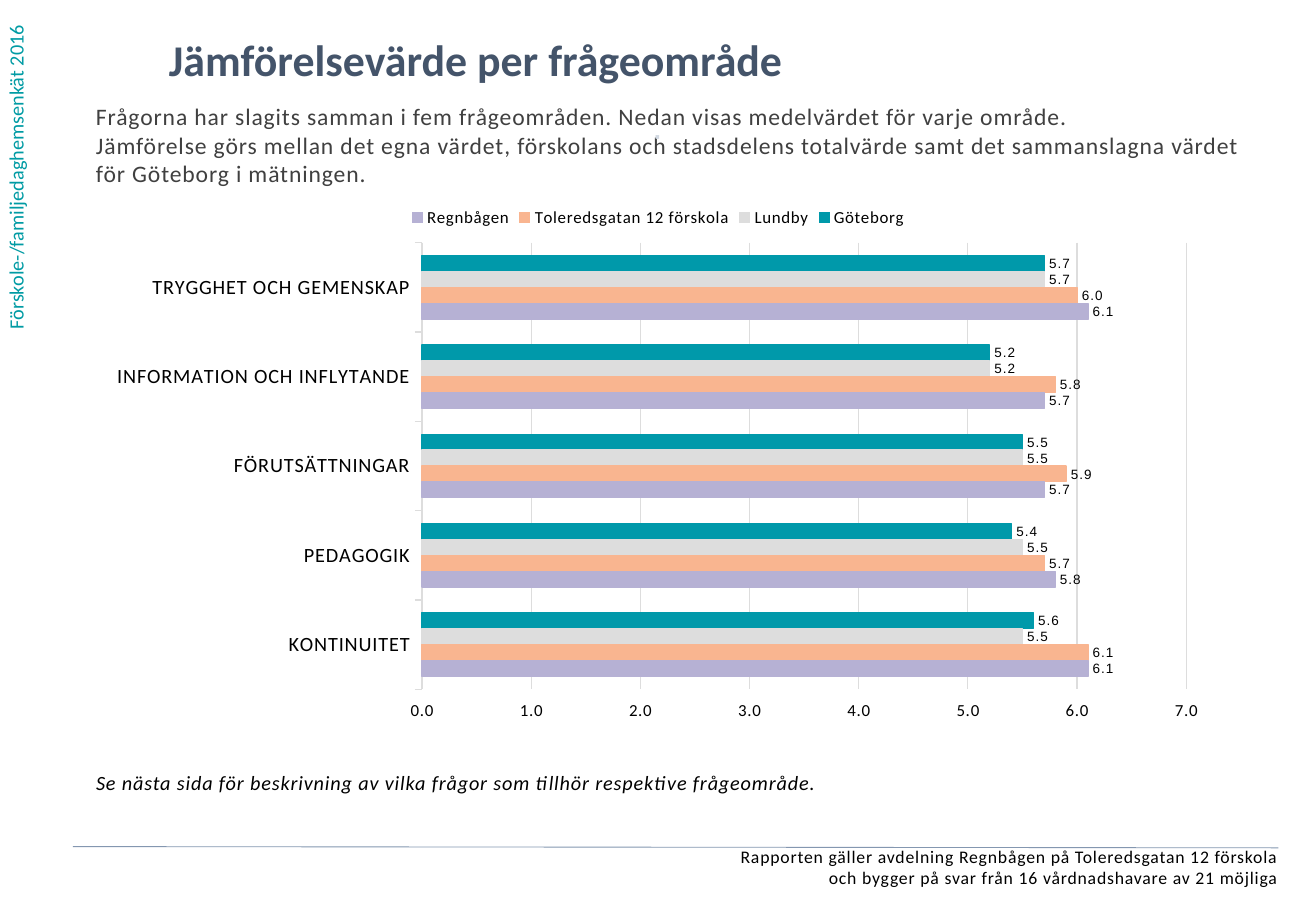
from lxml import etree
from pptx import Presentation
from pptx.chart.data import CategoryChartData
from pptx.dml.color import RGBColor
from pptx.enum.chart import (XL_CHART_TYPE, XL_LABEL_POSITION, XL_LEGEND_POSITION,
                             XL_TICK_LABEL_POSITION, XL_TICK_MARK)
from pptx.enum.shapes import MSO_CONNECTOR
from pptx.enum.text import MSO_ANCHOR, PP_ALIGN
from pptx.oxml import parse_xml
from pptx.oxml.ns import nsdecls, qn
from pptx.util import Inches, Pt

# Content
SURVEY = "Förskole-/familjedaghemsenkät 2016"
TITLE = "Jämförelsevärde per frågeområde"
INTRO = [
    "Frågorna har slagits samman i fem frågeområden. Nedan visas medelvärdet för varje område.",
    "Jämförelse görs mellan det egna värdet, förskolans och stadsdelens totalvärde "
    "samt det sammanslagna värdet för Göteborg i mätningen.",
]
NOTE = "Se nästa sida för beskrivning av vilka frågor som tillhör respektive frågeområde."
FOOTER = [
    "Rapporten gäller avdelning Regnbågen på Toleredsgatan 12 förskola",
    "och bygger på svar från 16 vårdnadshavare av 21 möjliga",
]
AREAS = ["TRYGGHET OCH GEMENSKAP", "INFORMATION OCH INFLYTANDE",
         "FÖRUTSÄTTNINGAR", "PEDAGOGIK", "KONTINUITET"]
RESULTS = [
    ("Göteborg", "0099AA", (5.7, 5.2, 5.5, 5.4, 5.6)),
    ("Lundby", "DDDDDD", (5.7, 5.2, 5.5, 5.5, 5.5)),
    ("Toleredsgatan 12 förskola", "F9B590", (6.0, 5.8, 5.9, 5.7, 6.1)),
    ("Regnbågen", "B6B1D4", (6.1, 5.7, 5.7, 5.8, 6.1)),
]

THEME = {
    "font": "Calibri", "label_font": "Arial", "tracking": "50",
    "teal": "009BA4", "heading": "44546A", "body": "404040", "black": "000000",
    "dot": "D2D9E2", "grid": "DDDDDD", "rule": "8497B0",
    "title": 26, "intro": 14, "small": 12, "footer": 10.5, "chart": 10, "value": 8,
}
FORMAT = "0.0;0.0"


def rgb(name):
    return RGBColor.from_string(THEME.get(name, name))


def add_text(slide, box, lines, size, color, align=PP_ALIGN.LEFT, bold=False,
             italic=False, tracked=True):
    holder = slide.shapes.add_textbox(*map(Inches, box))
    frame = holder.text_frame
    frame.word_wrap = True
    frame.margin_left = frame.margin_right = frame.margin_top = frame.margin_bottom = 0
    frame.text = "\n".join(lines)
    for paragraph in frame.paragraphs:
        paragraph.alignment = align
        for run in paragraph.runs:
            font = run.font
            font.name, font.size = THEME["font"], Pt(THEME[size])
            font.bold, font.italic = bold, italic
            font.color.rgb = rgb(color)
            if tracked:
                run._r.get_or_add_rPr().set("spc", THEME["tracking"])
    return frame


def set_font(font, size, name="font"):
    font.name, font.size = THEME[name], Pt(THEME[size])
    font.color.rgb = rgb("black")


def set_line(line, color, width=0.75):
    line.color.rgb = rgb(color)
    line.width = Pt(width)


def add_results(slide):
    data = CategoryChartData(number_format="0.0")
    data.categories = AREAS
    for name, _, values in RESULTS:
        data.add_series(name, values)
    chart = slide.shapes.add_chart(
        XL_CHART_TYPE.BAR_CLUSTERED, Inches(0.79), Inches(1.6),
        Inches(9.25), Inches(4.43), data).chart
    chart.has_title = False
    set_font(chart.font, "chart")
    chart.has_legend = True
    chart.legend.position = XL_LEGEND_POSITION.TOP
    chart.legend.include_in_layout = False
    set_font(chart.legend.font, "chart")

    # Axes: first area on top, scale numbers beyond the last area
    areas, scale = chart.category_axis, chart.value_axis
    areas.reverse_order = True
    areas.major_tick_mark = scale.major_tick_mark = XL_TICK_MARK.OUTSIDE
    set_font(areas.tick_labels.font, "small")
    set_line(areas.format.line, "grid")
    scale.minimum_scale, scale.maximum_scale, scale.major_unit = 0, 7, 1
    scale.tick_label_position = XL_TICK_LABEL_POSITION.HIGH
    scale.tick_labels.number_format = FORMAT
    scale.tick_labels.number_format_is_linked = False
    set_font(scale.tick_labels.font, "chart")
    scale.format.line.fill.background()
    set_line(scale.major_gridlines.format.line, "grid")

    # Bars and value labels
    plot = chart.plots[0]
    plot.gap_width, plot.overlap, plot.vary_by_categories = 162, 0, False
    for series, (_, color, _) in zip(plot.series, RESULTS):
        series.format.fill.solid()
        series.format.fill.fore_color.rgb = rgb(color)
        set_line(series.format.line, color)
        labels = series.data_labels
        labels.show_value = True
        labels.number_format, labels.number_format_is_linked = FORMAT, False
        labels.position = XL_LABEL_POSITION.OUTSIDE_END
        set_font(labels.font, "value", "label_font")

    # Letter spacing and fixed plot area
    root = chart._chartSpace
    for properties in root.iter(qn("a:defRPr")):
        properties.set("spc", THEME["tracking"])
    area = root.chart.plotArea
    for old in area.findall(qn("c:layout")):
        area.remove(old)
    sizes = "".join(f'<c:{key} val="{value}"/>' for key, value in (
        ("layoutTarget", "inner"), ("xMode", "edge"), ("yMode", "edge"),
        ("x", 0.29), ("y", 0.09), ("w", 0.68), ("h", 0.83)))
    area.insert(0, parse_xml(
        f'<c:layout {nsdecls("c")}><c:manualLayout>{sizes}</c:manualLayout></c:layout>'))


def main():
    deck = Presentation()
    deck.slide_width, deck.slide_height = Inches(10.83), Inches(7.5)
    slide = deck.slides.add_slide(deck.slide_layouts[6])

    # Survey name up the left edge
    survey = add_text(slide, (-0.02, 0, 0.4, 2.81), [SURVEY], "small", "teal", tracked=False)
    survey.margin_left = survey.margin_right = Inches(0.1)
    survey.margin_top = survey.margin_bottom = Inches(0.05)
    survey._txBody.bodyPr.set("vert", "vert270")

    # Heading and introduction
    add_text(slide, (1.39, 0.27, 8.34, 0.57), [TITLE], "title", "heading",
             bold=True, tracked=False)
    add_text(slide, (0.79, 0.84, 9.46, 1.01), INTRO, "intro", "body")
    add_text(slide, (3.87, 1.02, 3.08, 0.39), ["⋅"], "small", "dot",
             PP_ALIGN.CENTER, bold=True)

    add_results(slide)
    add_text(slide, (0.79, 6.34, 9.25, 0.3), [NOTE], "small", "black", italic=True)

    # Footer under a thin rule
    rule = slide.shapes.add_connector(
        MSO_CONNECTOR.STRAIGHT, Inches(0.6), Inches(6.97), Inches(10.52), Inches(6.98))
    set_line(rule.line, "rule", 0.5)
    etree.SubElement(rule._element.spPr, qn("a:effectLst"))
    footer = add_text(slide, (0.12, 6.96, 10.4, 0.35), FOOTER, "footer", "black",
                      PP_ALIGN.RIGHT)
    footer.vertical_anchor = MSO_ANCHOR.BOTTOM

    deck.save("out.pptx")


if __name__ == "__main__":
    main()
